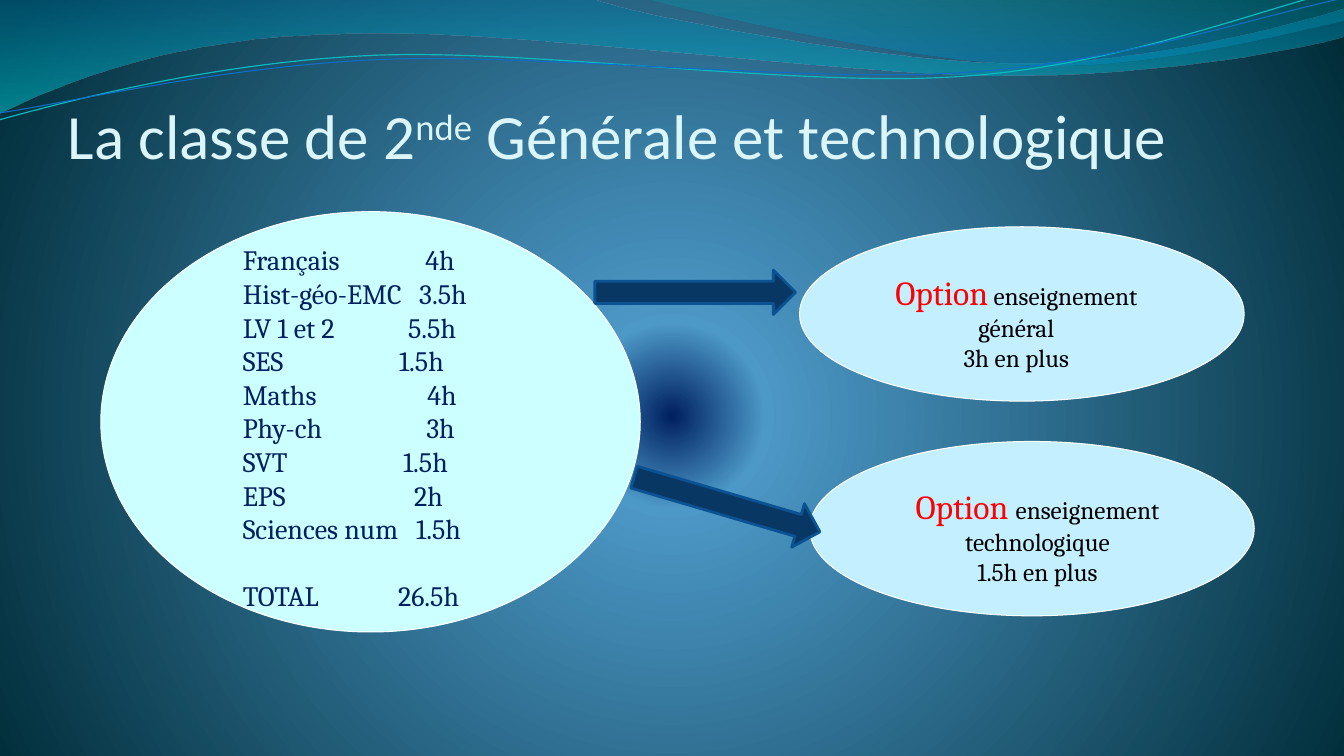
from dataclasses import dataclass
from math import cos, radians, sin
from typing import Optional

from lxml import etree
from pptx import Presentation
from pptx import util as u
from pptx.dml.color import RGBColor
from pptx.enum import shapes, text
from pptx.oxml import parse_xml
from pptx.oxml.ns import nsdecls, qn

PX = 9144  # EMU in one px, 100 px to the inch
NAVY, WHITE, BLACK, RED = "002060", "FFFFFF", "000000", "FF0000"
SERIF, SANS = "Cambria", "Calibri"
OVAL, ARROW = shapes.MSO_SHAPE.OVAL, shapes.MSO_SHAPE.RIGHT_ARROW
DOWN = '<a:lin ang="5400000" scaled="0"/>'
ROUND = ('<a:path path="circle"><a:fillToRect l="10000" t="110000" '
         'r="10000" b="100000"/></a:path>')


@dataclass
class Box:
    left: int
    top: int
    width: int
    height: int

    def emu(self) -> list[int]:
        return [n * PX for n in (self.left, self.top, self.width, self.height)]


@dataclass
class Stop:
    at: int
    color: str
    alpha: int = 100


@dataclass
class Wave:
    """Steps of two numbers are straight; steps of six are cubic curves."""
    start: tuple[int, int]
    steps: list[tuple[int, ...]]
    stops: Optional[list[Stop]] = None
    color: str = ""
    width: float = 0
    turn: float = 0
    pivot: tuple[int, int] = (0, 0)


@dataclass
class Form:
    kind: shapes.MSO_SHAPE
    box: Box
    fill: str
    line: str
    width: float
    turn: float = 0


@dataclass
class Course:
    name: str
    hours: str
    tab: int


@dataclass
class Option:
    oval: Box
    note: Box
    word: str
    name: str
    hours: str


WAVES = [
    Wave((0, 0), [(587, -1), (634, 17, 885, 63, 1011, 63),
                  (1138, 63, 1278, 26, 1333, 9), (1335, 36),
                  (1311, 44, 1160, 76, 994, 75), (829, 75, 509, 28, 343, 34),
                  (172, 36, 61, 83, -1, 113), (0, 0)],
         [Stop(0, "0074A1", 45), Stop(100, "00C6CF", 55)]),
    Wave((639, -1), [(679, 11, 909, 62, 1025, 65),
                     (1141, 69, 1282, 32, 1333, 21), (1333, 0), (639, -1)],
         [Stop(0, "00A1A9", 30), Stop(80, "008BBF", 45)]),
    Wave((-1, 119), [(64, 101, 211, 62, 369, 55), (527, 48, 790, 87, 950, 76),
                     (1110, 66, 1252, 8, 1331, -10)],
         color="0AB8BF", width=0.85, turn=357.3, pivot=(665, 58)),
    Wave((0, 112), [(63, 103, 218, 66, 378, 59), (537, 53, 796, 82, 955, 72),
                    (1115, 62, 1255, 14, 1334, -2)],
         color="0F6FC6", width=0.75, turn=357.3, pivot=(667, 59)),
]
COURSES = [
    Course("Français", "4h", 181), Course("Hist-géo-EMC", "3.5h", 175),
    Course("LV 1 et 2", "5.5h", 164), Course("SES", "1.5h", 155),
    Course("Maths", "4h", 183), Course("Phy-ch", "3h", 182),
    Course("SVT", "1.5h", 159), Course("EPS", "2h", 170),
    Course("Sciences num", "1.5h", 172), Course("TOTAL", "26.5h", 154),
]
OPTIONS = [
    Option(Box(793, 225, 441, 173), Box(856, 265, 304, 111),
           "Option", " enseignement général", "3h en plus"),
    Option(Box(803, 438, 441, 173), Box(877, 477, 304, 111),
           "Option ", "enseignement technologique", "1.5h en plus"),
]
ARROWS = [(Box(590, 268, 199, 44), 0), (Box(625, 478, 192, 45), 16.4)]


def rgb(code: str) -> RGBColor:
    return RGBColor.from_string(code)


def blend(root, stops: list[Stop], path: str) -> None:
    """Swap the first solid fill under root for a gradient."""
    marks = "".join(
        f'<a:gs pos="{s.at * 1000}"><a:srgbClr val="{s.color}">'
        f'<a:alpha val="{s.alpha * 1000}"/></a:srgbClr></a:gs>' for s in stops)
    grad = parse_xml(f'<a:gradFill {nsdecls("a")} rotWithShape="1">'
                     f'<a:gsLst>{marks}</a:gsLst>{path}</a:gradFill>')
    solid = next(root.iter(qn("a:solidFill")))
    solid.getparent().replace(solid, grad)


def level(wave: Wave, x: int, y: int) -> tuple[float, float]:
    """Undo the turn of the wave at one point, in EMU."""
    angle, (px, py) = radians(-wave.turn), wave.pivot
    dx, dy = x - px, y - py
    return ((px + dx * cos(angle) - dy * sin(angle)) * PX,
            (py + dx * sin(angle) + dy * cos(angle)) * PX)


def bend(shape, steps: list[tuple[int, ...]]) -> None:
    """Join the three straight parts of each curved step into one curve."""
    lines = iter(list(shape._element.iter(qn("a:lnTo"))))
    for step in steps:
        first, *others = [next(lines) for _ in range(len(step) // 2)]
        if others:
            curve = etree.Element(qn("a:cubicBezTo"))
            first.addprevious(curve)
            for part in (first, *others):
                curve.append(part[0])
                part.getparent().remove(part)


def add_wave(slide, wave: Wave) -> None:
    pen = slide.shapes.build_freeform(*level(wave, *wave.start), scale=1.0)
    pen.add_line_segments(
        [level(wave, *step[i:i + 2]) for step in wave.steps
         for i in range(0, len(step), 2)], close=bool(wave.stops))
    shape = pen.convert_to_shape()
    bend(shape, wave.steps)
    shape.shadow.inherit = False
    shape.rotation = wave.turn
    if wave.stops:
        shape.fill.solid()
        blend(shape._element, wave.stops, DOWN)
        shape.line.fill.background()
    else:
        shape.fill.background()
        shape.line.color.rgb = rgb(wave.color)
        shape.line.width = u.Pt(wave.width)


def add_form(slide, form: Form) -> None:
    shape = slide.shapes.add_shape(form.kind, *form.box.emu())
    shape.shadow.inherit = False
    shape.rotation = form.turn
    shape.fill.solid()
    shape.fill.fore_color.rgb = rgb(form.fill)
    shape.line.color.rgb = rgb(form.line)
    shape.line.width = u.Pt(form.width)


def style(font, name: str, size: float, color: str) -> None:
    font.name, font.size, font.color.rgb = name, u.Pt(size), rgb(color)


def add_frame(slide, box: Box, count: int):
    frame = slide.shapes.add_textbox(*box.emu()).text_frame
    frame.word_wrap = True
    for _ in range(count - 1):
        frame.add_paragraph()
    return frame


def add_title(slide) -> None:
    title = slide.shapes.title
    title.left, title.top, title.width, title.height = Box(67, 14, 1198, 157).emu()
    frame = title.text_frame
    frame.auto_size = text.MSO_AUTO_SIZE.NONE
    frame.vertical_anchor = text.MSO_ANCHOR.BOTTOM
    frame.margin_left = frame.margin_right = frame.margin_bottom = 0
    frame.margin_top = 5 * PX
    para = frame.paragraphs[0]
    para.alignment = text.PP_ALIGN.LEFT
    style(para.font, SANS, 45, "DBF5F9")
    for part in ("La classe de 2", "nde", " Générale et technologique"):
        run = para.add_run()
        run.text = part
        if part == "nde":
            run._r.get_or_add_rPr().set("baseline", "30000")


def add_hours(slide) -> None:
    frame = add_frame(slide, Box(231, 236, 367, 411), len(COURSES))
    for para, item in zip(frame.paragraphs, COURSES):
        para.text = f"{item.name}\t{item.hours}"
        style(para.font, SERIF, 20, NAVY)
        tabs = parse_xml(f'<a:tabLst {nsdecls("a")}>'
                         f'<a:tab pos="{item.tab * PX}" algn="l"/></a:tabLst>')
        para._p.get_or_add_pPr().insert(0, tabs)
    frame.paragraphs[-1].space_before = u.Pt(24)


def add_option(slide, item: Option) -> None:
    add_form(slide, Form(OVAL, item.oval, "C4EFFF", WHITE, 0.75))
    head, foot = add_frame(slide, item.note, 2).paragraphs
    for para in (head, foot):
        para.alignment = text.PP_ALIGN.CENTER
        style(para.font, SERIF, 18, BLACK)
    word = head.add_run()
    word.text = item.word
    style(word.font, SERIF, 24, RED)
    head.add_run().text = item.name
    foot.text = item.hours


def main() -> None:
    deck = Presentation()
    deck.slide_width, deck.slide_height = 1333 * PX, 750 * PX
    slide = deck.slides.add_slide(deck.slide_layouts[5])
    slide.background.fill.solid()
    blend(slide._element, [Stop(0, NAVY), Stop(12, "4C98C7"), Stop(100, "002C38")], ROUND)
    for wave in WAVES:
        add_wave(slide, wave)
    add_title(slide)
    add_form(slide, Form(OVAL, Box(100, 210, 535, 417), "CCFFFF", WHITE, 0.75))
    add_hours(slide)
    for item in OPTIONS:
        add_option(slide, item)
    for box, turn in ARROWS:
        add_form(slide, Form(ARROW, box, "083763", "0B5292", 2, turn))
    deck.save("out.pptx")


if __name__ == "__main__":
    main()
